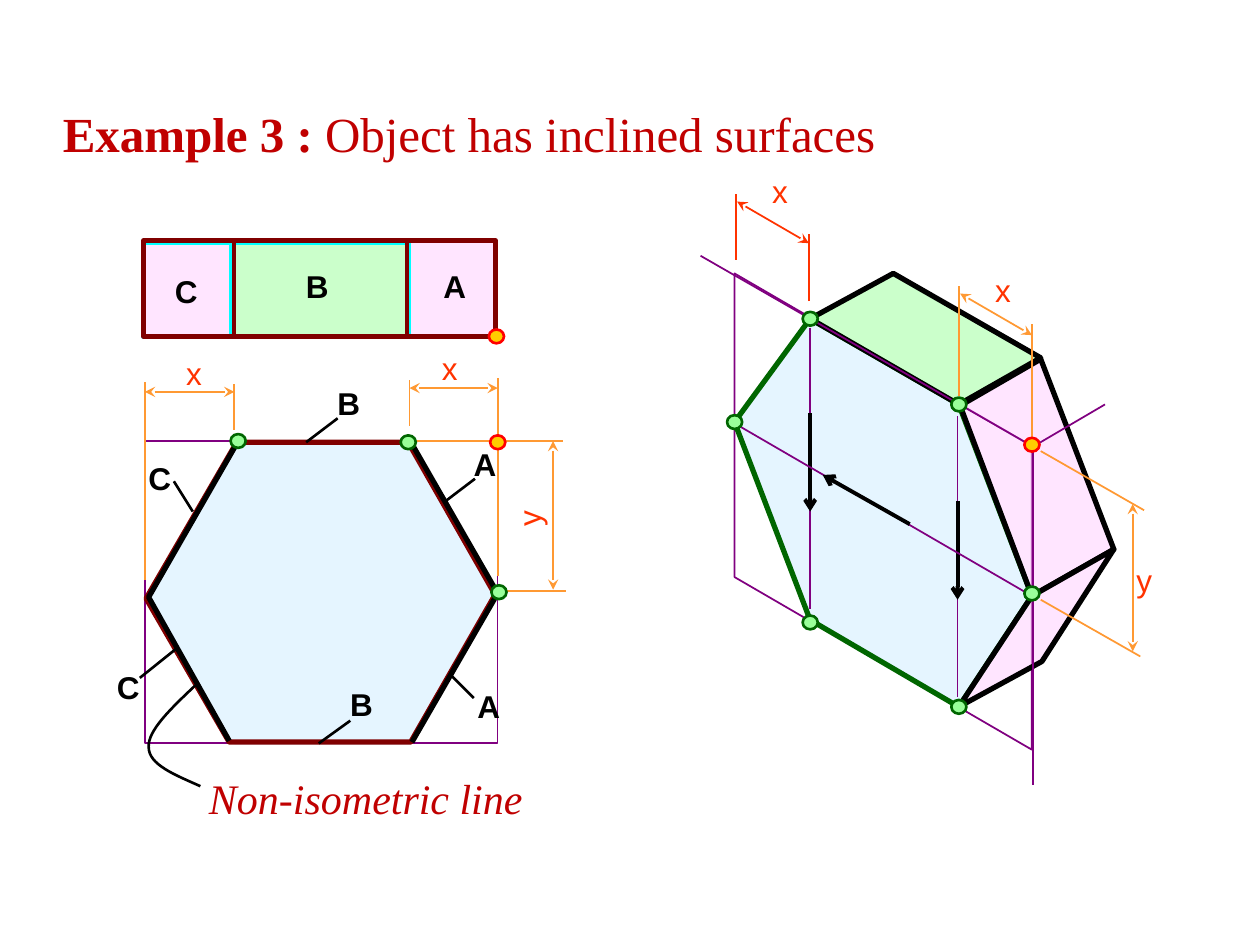
from lxml.etree import SubElement
from pptx import Presentation
from pptx.dml.color import RGBColor
from pptx.enum.shapes import MSO_CONNECTOR as Connector, MSO_SHAPE as Shape
from pptx.enum.text import MSO_AUTO_SIZE as AutoSize
from pptx.oxml.ns import qn
from pptx.util import Cm, Pt

CM_PER_INCH = 2.54
BLACK, PURPLE, ORANGE, RED = "000000", "800080", "FF9933", "FF3300"
MAROON, CRIMSON, CYAN, DARK_GREEN = "800000", "C00000", "00FFFF", "006600"
BLUE, PINK, GREEN = "CCECFF", "FFCCFF", "99FF99"


def size(inches):
    return Cm(inches * CM_PER_INCH)


def color(code):
    return RGBColor.from_string(code)


def paint(shape, fill=None, opacity=100, border=None, weight=1):
    shape.shadow.inherit = False
    if fill:
        shape.fill.solid()
        shape.fill.fore_color.rgb = color(fill)
        if opacity < 100:
            tint = shape.element.spPr.find(qn("a:solidFill"))[0]
            SubElement(tint, qn("a:alpha"), val=str(opacity * 1000))
    else:
        shape.fill.background()
    if border:
        shape.line.color.rgb = color(border)
        shape.line.width = Pt(weight)
    else:
        shape.line.fill.background()
    return shape


def preset(page, kind, left, top, width, height, **style):
    frame = [size(value) for value in (left, top, width, height)]
    return paint(page.shapes.add_shape(kind, *frame), **style)


def outline(page, points, closed=True, **style):
    start, *rest = [(size(x), size(y)) for x, y in points]
    builder = page.shapes.build_freeform(*start)
    builder.add_line_segments(rest, close=closed)
    return paint(builder.convert_to_shape(), **style)


def curve(page, points, **style):
    shape = outline(page, points, closed=False, **style)
    track = next(shape.element.iter(qn("a:path")))
    steps = track.findall(qn("a:lnTo"))
    for first in range(0, len(steps), 3):
        bend = SubElement(track, qn("a:cubicBezTo"))
        for step in steps[first:first + 3]:
            bend.append(step[0])
            track.remove(step)


def line(page, start, end, stroke=BLACK, weight=1, head=None, tail=None):
    ends = [size(value) for value in (*start, *end)]
    connector = page.shapes.add_connector(Connector.STRAIGHT, *ends)
    connector.line.color.rgb = color(stroke)
    connector.line.width = Pt(weight)
    properties = connector.element.spPr
    for tag, kind in (("a:headEnd", head), ("a:tailEnd", tail)):
        if kind:
            SubElement(properties.find(qn("a:ln")), qn(tag), type=kind)
    SubElement(properties, qn("a:effectLst"))


def text(page, left, top, width, height, *spans, font="Arial", points=18,
         fill=BLACK, italic=False, rotation=0):
    box = page.shapes.add_textbox(*[size(v) for v in (left, top, width, height)])
    box.rotation = rotation
    box.text_frame.word_wrap = False
    box.text_frame.auto_size = AutoSize.SHAPE_TO_FIT_TEXT
    para = box.text_frame.paragraphs[0]
    for words, bold in spans:
        span = para.add_run()
        span.text = words
        span.font.name = font
        span.font.size = Pt(points)
        span.font.bold = bold
        span.font.italic = italic
        span.font.color.rgb = color(fill)


def surface_name(page, name, left, top):
    text(page, left, top, 0.38, 0.4, (name, True))


def dimension(page, name, position, arrow, witnesses, stroke=ORANGE, rotation=0):
    for start, end in witnesses:
        line(page, start, end, stroke)
    line(page, *arrow, stroke, head="stealth", tail="stealth")
    text(page, *position, 0.33, 0.4, (name, False), fill=RED, rotation=rotation)


def dots(page, centers, fill, border):
    width, height = 0.12, 0.11
    for x, y in centers:
        preset(page, Shape.OVAL, x - width / 2, y - height / 2, width, height,
               fill=fill, border=border, weight=1.5)


def draw_top_view(page):
    top, height = 1.92, 0.75
    faces = [
        ("A", 3.24, 0.7, PINK, None, (3.42, 2.07)),
        ("B", 1.85, 1.39, GREEN, CYAN, (2.33, 2.07)),
        ("C", 1.14, 0.7, PINK, CYAN, (1.29, 2.11)),
    ]
    for name, left, width, fill, border, position in faces:
        preset(page, Shape.RECTANGLE, left, top, width, height,
               fill=fill, opacity=50, border=border, weight=3)
        surface_name(page, name, *position)
    preset(page, Shape.RECTANGLE, 1.14, 1.91, 2.79, 0.76, border=MAROON, weight=3)
    for x in (1.86, 3.23):
        line(page, (x, 2.67), (x, 1.9), MAROON, 2.25)


def draw_front_view(page):
    preset(page, Shape.RECTANGLE, 1.15, 3.5, 2.8, 2.4, border=PURPLE)
    hexagon = preset(page, Shape.HEXAGON, 1.17, 3.51, 2.78, 2.4, fill=BLUE, opacity=50)
    hexagon.adjustments[0] = 0.289
    outline(page, [(1.88, 3.51), (3.24, 3.51), (3.93, 4.72), (3.26, 5.89),
                   (1.82, 5.89), (1.16, 4.75)], border=MAROON, weight=3)
    sides = [
        [(1.88, 3.52), (1.18, 4.74), (1.82, 5.88)],
        [(3.25, 3.49), (3.95, 4.71), (3.27, 5.89)],
    ]
    for side in sides:
        outline(page, side, closed=False, border=BLACK, weight=3)

    curve(page, [(1.59, 6.24), (1.39, 6.15), (1.18, 6.07), (1.18, 5.93),
                 (1.17, 5.8), (1.36, 5.62), (1.55, 5.44)], border=BLACK, weight=1.5)
    text(page, 1.56, 6.08, 2.71, 0.51, ("Non-isometric line", False),
         font="Times New Roman", points=24, fill=CRIMSON, italic=True)

    leaders = [
        ("A", (3.66, 3.48), (3.77, 3.8), (3.52, 3.99)),
        ("B", (2.58, 3), (2.68, 3.32), (2.43, 3.51)),
        ("A", (3.69, 5.4), (3.76, 5.54), (3.57, 5.35)),
        ("B", (2.68, 5.39), (2.78, 5.72), (2.53, 5.9)),
        ("C", (1.08, 3.59), (1.38, 3.82), (1.53, 4.06)),
        ("C", (0.83, 5.25), (1.11, 5.38), (1.41, 5.14)),
    ]
    for name, position, start, end in leaders:
        surface_name(page, name, *position)
        line(page, start, end, weight=1.5)

    dimension(page, "x", (1.38, 2.76), ((1.15, 3.11), (1.86, 3.11)),
              [((1.86, 3.05), (1.86, 3.41)), ((1.15, 4.6), (1.15, 3.03))])
    dimension(page, "x", (3.41, 2.72), ((3.95, 3.08), (3.25, 3.08)),
              [((3.25, 3.02), (3.25, 3.38)), ((3.95, 4.57), (3.95, 3))])
    dimension(page, "y", (4.03, 3.91), ((4.39, 3.5), (4.39, 4.68)),
              [((3.99, 4.69), (4.49, 4.69)), ((3.28, 3.5), (4.47, 3.5))], rotation=270)


def draw_isometric_view(page):
    outline(page, [(8.19, 3.54), (5.83, 2.17), (5.83, 4.58), (8.19, 5.95)], border=PURPLE)
    faces = [
        (BLUE, DARK_GREEN, [(7.61, 5.61), (8.19, 4.73), (7.61, 3.21),
                            (6.43, 2.53), (5.83, 3.35), (6.43, 4.92)]),
        (PINK, BLACK, [(8.19, 4.73), (8.84, 4.36), (8.26, 2.85), (7.62, 3.22)]),
        (GREEN, BLACK, [(7.09, 2.17), (6.43, 2.53), (7.61, 3.21), (8.26, 2.84)]),
        (PINK, BLACK, [(8.27, 5.25), (7.61, 5.61), (8.19, 4.73), (8.84, 4.36)]),
    ]
    for fill, border, points in faces:
        outline(page, points, fill=fill, opacity=50, border=border, weight=3)

    for start, end in [((8.2, 3.54), (8.2, 6.23)), ((8.19, 3.54), (5.56, 2.03)),
                       ((8.19, 3.55), (8.77, 3.21))]:
        line(page, start, end, PURPLE)

    transfers = [
        ((6.43, 2.6), (6.43, 4.83), (6.43, 3.28), (6.43, 4.06)),
        ((7.6, 3.3), (7.6, 5.53), (7.6, 3.98), (7.6, 4.76)),
        ((8.19, 4.73), (5.83, 3.36), (7.22, 4.16), (6.53, 3.77)),
    ]
    for guide_start, guide_end, arrow_start, arrow_end in transfers:
        line(page, guide_start, guide_end, PURPLE)
        line(page, arrow_start, arrow_end, weight=2.25, tail="arrow")

    dimension(page, "x", (7.8, 2.1), ((8.19, 2.66), (7.62, 2.33)),
              [((7.61, 3.14), (7.61, 2.27)), ((8.19, 3.47), (8.19, 2.57))])
    dimension(page, "y", (8.92, 4.4), ((8.99, 4), (8.99, 5.17)),
              [((8.26, 3.58), (9.08, 4.05)), ((8.26, 4.76), (9.05, 5.21))])
    dimension(page, "x", (6.03, 1.32), ((6.42, 1.93), (5.85, 1.6)),
              [((5.84, 2.06), (5.84, 1.54)), ((6.42, 2.39), (6.42, 1.86))], stroke=RED)


def main():
    deck = Presentation()
    deck.slide_width, deck.slide_height = Cm(25.4), Cm(19.05)
    page = deck.slides.add_slide(deck.slide_layouts[6])
    draw_front_view(page)
    draw_isometric_view(page)
    draw_top_view(page)
    dots(page, [(3.24, 3.51), (3.96, 4.7), (1.89, 3.5), (7.61, 3.21), (6.43, 2.53),
                (8.19, 4.71), (7.61, 5.61), (6.43, 4.94), (5.83, 3.35)],
         GREEN, DARK_GREEN)
    dots(page, [(8.19, 3.53), (3.95, 3.51), (3.94, 2.67)], "FFCC00", "FF0000")
    text(page, 0.4, 0.77, 6.72, 0.57, ("Example 3 : ", True),
         ("Object has inclined surfaces", False),
         font="Times New Roman", points=28, fill=CRIMSON)
    deck.save("out.pptx")


if __name__ == "__main__":
    main()
